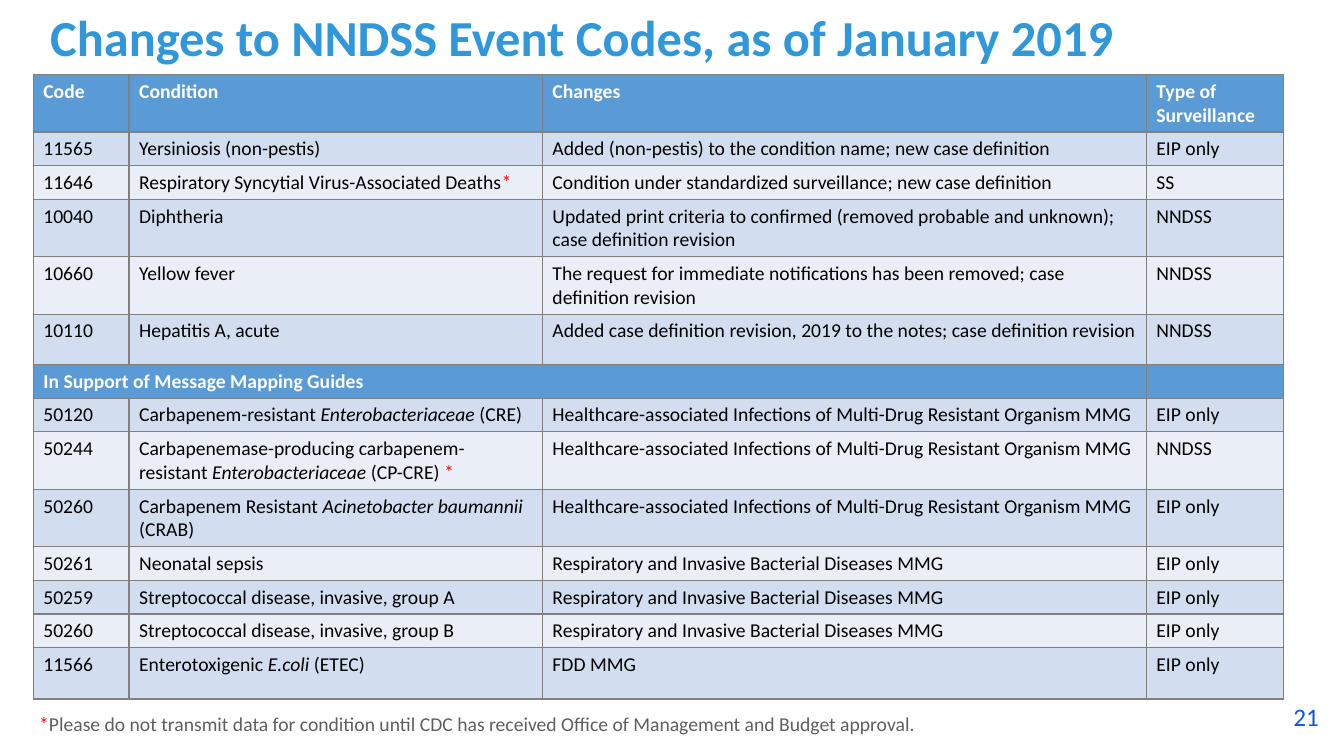
from lxml import etree
from pptx import Presentation
from pptx.dml.color import RGBColor
from pptx.enum import text
from pptx.oxml.ns import qn
from pptx.util import Inches, Pt

FONT = "Calibri"
BLUE, PALE, PALER = "5B9BD5", "D2DEEF", "EAEFF7"
BLACK, WHITE, RED, GRID = "000000", "FFFFFF", "FF0000", "808080"

COLUMN_WIDTHS = [0.95, 4.1, 5.99, 1.36]
HEADERS = ["Code", "Condition", "Changes", "Type of Surveillance"]
SECTION = "In Support of Message Mapping Guides"
MDRO = "Healthcare-associated Infections of Multi-Drug Resistant Organism MMG"
RIBD = "Respiratory and Invasive Bacterial Diseases MMG"

# Row height and cell texts; underscores enclose italics, a final * is red
CONDITION_ROWS = [
    (0.33, ["11565", "Yersiniosis (non-pestis)",
            "Added (non-pestis) to the condition name; new case definition", "EIP only"]),
    (0.33, ["11646", "Respiratory Syncytial Virus-Associated Deaths*",
            "Condition under standardized surveillance; new case definition", "SS"]),
    (0.57, ["10040", "Diphtheria",
            "Updated print criteria to confirmed (removed probable and unknown); "
            "case definition revision", "NNDSS"]),
    (0.57, ["10660", "Yellow fever",
            "The request for immediate notifications has been removed; "
            "case definition revision", "NNDSS"]),
    (0.5, ["10110", "Hepatitis A, acute",
           "Added case definition revision, 2019 to the notes; case definition revision",
           "NNDSS"]),
]
GUIDE_ROWS = [
    (0.33, ["50120", "Carbapenem-resistant _Enterobacteriaceae_ (CRE)", MDRO, "EIP only"]),
    (0.57, ["50244", "Carbapenemase-producing carbapenem-resistant "
            "_Enterobacteriaceae_ (CP-CRE) *", MDRO, "NNDSS"]),
    (0.57, ["50260", "Carbapenem Resistant _Acinetobacter baumannii _(CRAB)", MDRO, "EIP only"]),
    (0.33, ["50261", "Neonatal sepsis", RIBD, "EIP only"]),
    (0.33, ["50259", "Streptococcal disease, invasive, group A", RIBD, "EIP only"]),
    (0.33, ["50260", "Streptococcal disease, invasive, group B", RIBD, "EIP only"]),
    (0.51, ["11566", "Enterotoxigenic _E.coli_ (ETEC)", "FDD MMG", "EIP only"]),
]


def rgb(value):
    return RGBColor.from_string(value)


def set_font(font, size, color, bold=False):
    font.name, font.size, font.bold = FONT, Pt(size), bold
    font.color.rgb = rgb(color)


def add_run(p, words, color=None, italic=None):
    r = p.add_run()
    r.text = words
    r.font.italic = italic
    if color:
        r.font.color.rgb = rgb(color)


def add_marked_runs(p, marked):
    """Turn _words_ into italics and a final * into a red mark."""
    body = marked.removesuffix("*")
    for i, words in enumerate(body.split("_")):
        if words:
            add_run(p, words, italic=True if i % 2 else None)
    if body != marked:
        add_run(p, "*", RED)


def add_text(slide, box, size, color, bold=False):
    """Add a wrapping text box and return its frame and first paragraph."""
    tf = slide.shapes.add_textbox(*map(Inches, box)).text_frame
    tf.word_wrap = True
    p = tf.paragraphs[0]
    set_font(p.font, size, color, bold)
    return tf, p


def add_title(slide, box):
    tf, p = add_text(slide, box, 36, "2F97DA", True)
    tf.vertical_anchor = text.MSO_ANCHOR.BOTTOM
    p.line_spacing = Pt(40)
    add_run(p, "Changes to NNDSS Event Codes, as of January 2019")


def add_footnote(slide, box):
    _, p = add_text(slide, box, 14, "5F5F5F")
    p._p.get_or_add_pPr().set("marL", str(Inches(0.02)))
    add_run(p, "*", RED)
    add_run(p, "Please do not transmit data for condition until CDC has received "
               "Office of Management and Budget approval.")


def add_page_number(slide, box):
    _, p = add_text(slide, box, 18, "0F56DC")
    p.alignment = text.PP_ALIGN.RIGHT
    add_run(p, "21")


def add_borders(cell):
    tcPr = cell._tc.get_or_add_tcPr()
    for side in ("lnL", "lnR", "lnT", "lnB"):
        ln = etree.SubElement(tcPr, qn(f"a:{side}"), w=str(Pt(1)))
        fill = etree.SubElement(ln, qn("a:solidFill"))
        etree.SubElement(fill, qn("a:srgbClr"), val=GRID)


def fill_cell(cell, words, fill, heading):
    add_borders(cell)
    cell.fill.solid()
    cell.fill.fore_color.rgb = rgb(fill)
    p = cell.text_frame.paragraphs[0]
    set_font(p.font, 14, WHITE if heading else BLACK, heading)
    if words:
        add_marked_runs(p, words)
    else:
        cell.margin_top = cell.margin_bottom = 0


def add_code_table(slide, left, top):
    rows = [(0.57, HEADERS), *CONDITION_ROWS, (0.33, [SECTION, "", "", ""]), *GUIDE_ROWS]
    section = 1 + len(CONDITION_ROWS)
    width, height = sum(COLUMN_WIDTHS), sum(h for h, _ in rows)
    table = slide.shapes.add_table(len(rows), len(COLUMN_WIDTHS),
                                   *map(Inches, (left, top, width, height))).table
    for column, w in zip(table.columns, COLUMN_WIDTHS):
        column.width = Inches(w)
    for i, (h, cells) in enumerate(rows):
        table.rows[i].height = Inches(h)
        heading = i in (0, section)
        fill = BLUE if heading else PALE if (i % section) % 2 else PALER
        for j, words in enumerate(cells):
            fill_cell(table.cell(i, j), words, fill, heading)
    table.cell(section, 0).merge(table.cell(section, 2))


def main():
    prs = Presentation()
    prs.slide_width, prs.slide_height = Inches(13.33), Inches(7.5)
    slide = prs.slides.add_slide(prs.slide_layouts[6])
    add_page_number(slide, (11.92, 6.91, 1.26, 0.4))
    add_code_table(slide, 0.33, 0.74)
    add_footnote(slide, (0.27, 7.01, 11.83, 0.34))
    add_title(slide, (0.4, 0.21, 12, 0.5))
    prs.save("out.pptx")


if __name__ == "__main__":
    main()
